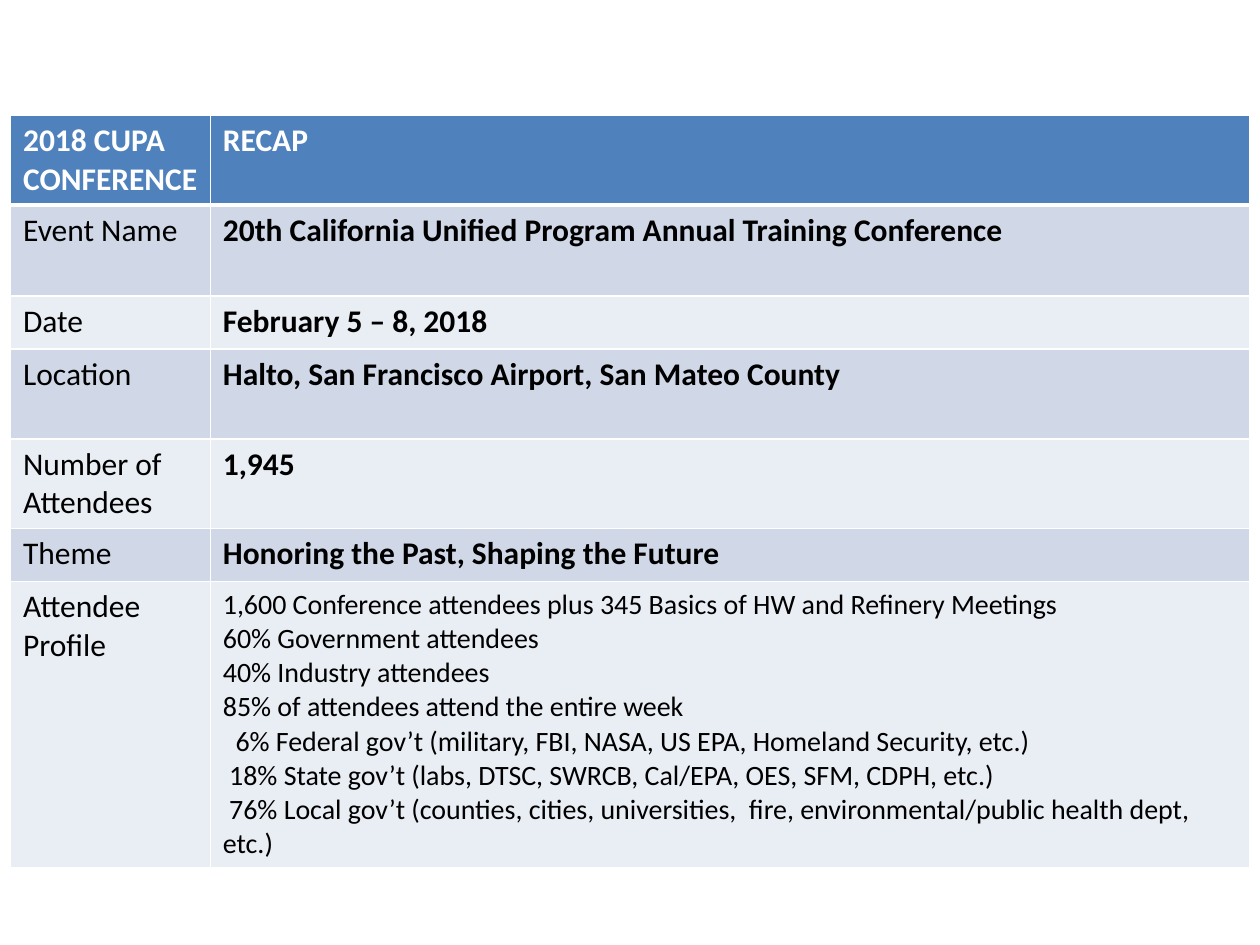
from lxml import etree
from pptx import Presentation
from pptx import util as u
from pptx.dml.color import RGBColor
from pptx.enum import text
from pptx.oxml import ns

WHITE = RGBColor(0xFF, 0xFF, 0xFF)
BLACK = RGBColor(0x00, 0x00, 0x00)
HEADER_BLUE = RGBColor(0x4F, 0x81, 0xBD)
BAND_DARK = RGBColor(0xD0, 0xD8, 0xE8)
BAND_LIGHT = RGBColor(0xE9, 0xED, 0xF4)

# Attendee profile lines with their first-line indent in points
PROFILE = [
    ("1,600 Conference attendees plus 345 Basics of HW and Refinery Meetings", 0),
    ("60% Government attendees", 0),
    ("40% Industry attendees", 0),
    ("85% of attendees attend the entire week", 0),
    ("6% Federal gov’t (military, FBI, NASA, US EPA, Homeland Security, etc.)", 7.2),
    ("18% State gov’t (labs, DTSC, SWRCB, Cal/EPA, OES, SFM, CDPH, etc.)", 3.6),
    ("76% Local gov’t (counties, cities, universities,  fire, "
     "environmental/public health dept, etc.)", 3.6),
]

# Label, details, row height in points
RECAP = [
    ("2018 CUPA CONFERENCE", "RECAP", 51),
    ("Event Name", "20th California Unified Program Annual Training Conference", 52),
    ("Date", "February 5 – 8, 2018", 30.2),
    ("Location", "Halto, San Francisco Airport, San Mateo County", 51.5),
    ("Number of Attendees", "1,945", 51),
    ("Theme", "Honoring the Past, Shaping the Future", 30.2),
    ("Attendee Profile", PROFILE, 163.5),
]


class SlideBuilder:
    """Holds the table style and the current slide."""

    font_name = "Calibri"
    border_sides = ("L", "R", "T", "B")

    def __init__(self, slide):
        self.slide = slide

    def table(self, left, top, column_widths, rows):
        heights = [row[-1] for row in rows]
        frame = self.slide.shapes.add_table(
            len(rows), len(column_widths), u.Pt(left), u.Pt(top),
            u.Pt(sum(column_widths)), u.Pt(sum(heights)))
        table = frame.table
        for column, width in zip(table.columns, column_widths):
            column.width = u.Pt(width)
        for row, height in zip(table.rows, heights):
            row.height = u.Pt(height)
        return table

    def cell(self, cell, content, fill, borders, size, color, bold):
        lines = [(content, 0)] if isinstance(content, str) else content
        frame = cell.text_frame
        for index, (line, indent) in enumerate(lines):
            paragraph = frame.add_paragraph() if index else frame.paragraphs[0]
            self.paragraph(paragraph, line, indent, size, color, bold)
        cell.vertical_anchor = text.MSO_ANCHOR.TOP
        self.borders(cell, borders)
        cell.fill.solid()
        cell.fill.fore_color.rgb = fill

    def paragraph(self, paragraph, line, indent, size, color, bold):
        if indent:
            properties = paragraph._p.get_or_add_pPr()
            properties.set("marL", "0")
            properties.set("indent", str(int(u.Pt(indent))))
        run = paragraph.add_run()
        run.text = line
        font_values = {"name": self.font_name, "size": u.Pt(size), "bold": bold}
        for name, value in font_values.items():
            setattr(run.font, name, value)
        run.font.color.rgb = color

    def borders(self, cell, widths):
        properties = cell._tc.get_or_add_tcPr()
        for side in self.border_sides:
            line = etree.SubElement(properties, ns.qn(f"a:ln{side}"),
                                    w=str(int(u.Pt(widths.get(side, 1)))))
            fill = etree.SubElement(line, ns.qn("a:solidFill"))
            etree.SubElement(fill, ns.qn("a:srgbClr"), val=str(WHITE))


def main():
    presentation = Presentation()
    presentation.slide_width = u.Pt(720)
    presentation.slide_height = u.Pt(540)
    builder = SlideBuilder(presentation.slides.add_slide(presentation.slide_layouts[6]))

    # Recap table
    table = builder.table(6, 66, (114.2, 593.8), RECAP)
    for index, (label, details, _) in enumerate(RECAP):
        # Header row, then alternating bands
        header = index == 0
        fill = HEADER_BLUE if header else BAND_DARK if index % 2 else BAND_LIGHT
        color = WHITE if header else BLACK
        borders = {0: {"B": 3}, 1: {"T": 3}}.get(index, {})
        is_list = details is PROFILE
        builder.cell(table.cell(index, 0), label, fill, borders, 18, color, header)
        builder.cell(table.cell(index, 1), details, fill, borders,
                     16 if is_list else 18, color, not is_list)

    presentation.save("out.pptx")


if __name__ == "__main__":
    main()
